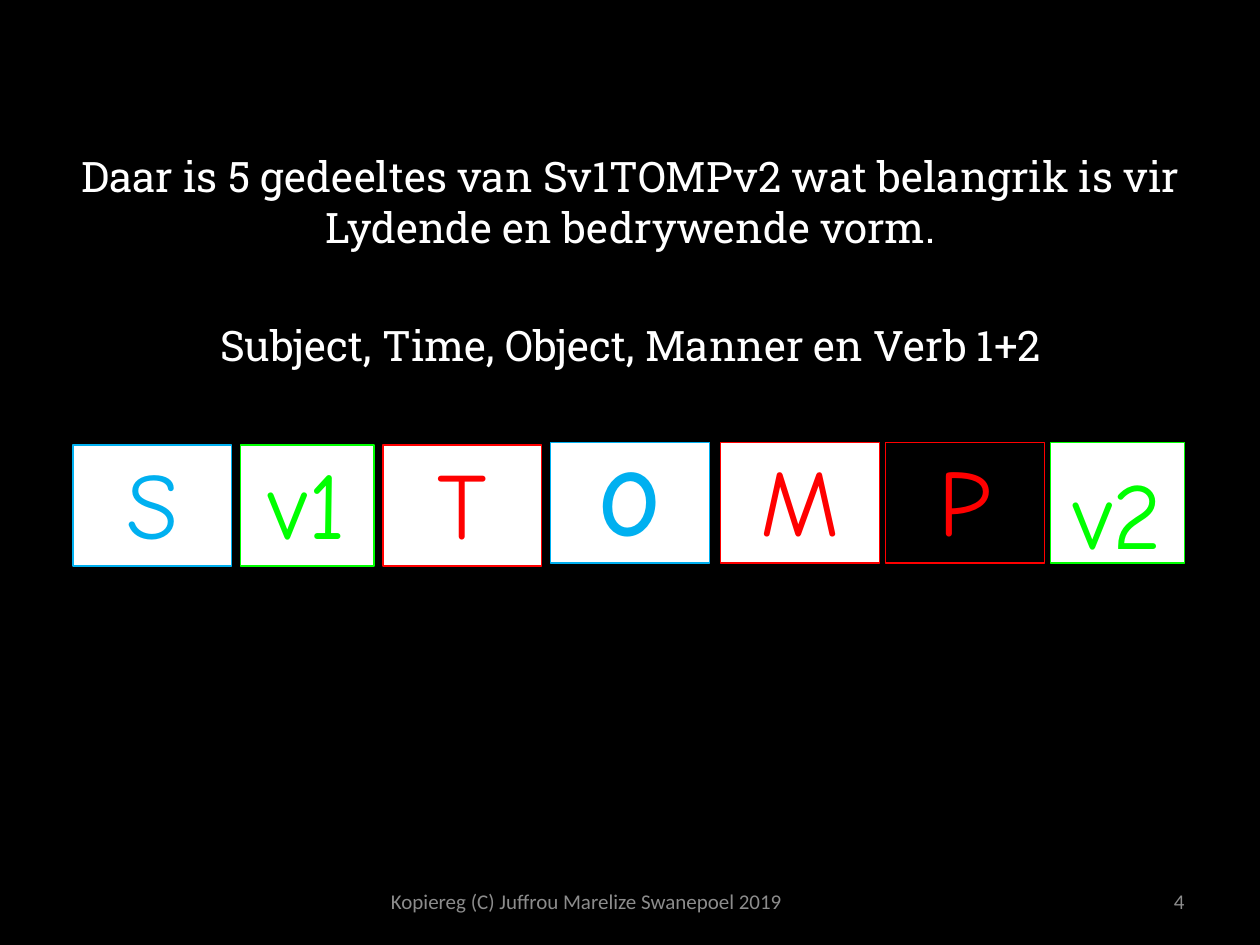
from pptx import Presentation
from pptx.dml.color import RGBColor
from pptx.enum.shapes import MSO_SHAPE
from pptx.enum.text import MSO_ANCHOR, MSO_AUTO_SIZE, PP_ALIGN
from pptx.oxml.xmlchemy import OxmlElement
from pptx.util import Inches, Pt

WIDTH, HEIGHT = 10, 7.5
BLUE, GREEN, RED = "00B0F0", "00FF00", "FF0000"
WHITE, BLACK, GREY = "FFFFFF", "000000", "8C8C8C"


def color(value):
    return RGBColor.from_string(value)


def apply(target, values):
    for name, value in values.items():
        setattr(target, name, value)


class SlideBuilder:
    """Holds the style and the current slide; places are shares of its size."""

    body_font = {"name": "Roboto Slab", "size": Pt(24)}
    card_font = {"name": "Comic Neue", "size": Pt(54)}
    footer_font = {"name": "Calibri", "size": Pt(12)}

    def __init__(self, deck, layout, background):
        self.deck = deck
        self.slide = deck.slides.add_slide(layout)
        self.slide.background.fill.solid()
        self.slide.background.fill.fore_color.rgb = color(background)

    def area(self, left, top, width, height):
        across, down = self.deck.slide_width, self.deck.slide_height
        return (round(left * across), round(top * down),
                round(width * across), round(height * down))

    def add_text(self, para, text, font, ink, **settings):
        apply(para, settings)
        span = para.add_run()
        span.text = text
        apply(span.font, font)
        span.font.color.rgb = color(ink)

    def body(self, area, lines, gap):
        title, box = self.slide.placeholders
        title.element.getparent().remove(title.element)
        apply(box, dict(zip(("left", "top", "width", "height"), self.area(*area))))
        apply(box.text_frame, {"word_wrap": True, "auto_size": MSO_AUTO_SIZE.NONE})
        for index, line in enumerate(lines):
            para = box.text_frame.add_paragraph() if index else box.text_frame.paragraphs[0]
            self.add_text(para, line, self.body_font, WHITE, alignment=PP_ALIGN.CENTER,
                          space_before=Pt(gap if index else 0))
            # No bullet and no hanging indent
            properties = para._p.get_or_add_pPr()
            properties.set("marL", "0")
            properties.set("indent", "0")
            properties.append(OxmlElement("a:buNone"))

    def card(self, area, text, ink, fill=WHITE, bold=False, spacing=0.9):
        box = self.slide.shapes.add_shape(MSO_SHAPE.RECTANGLE, *self.area(*area))
        box.shadow.inherit = False
        box.fill.solid()
        box.fill.fore_color.rgb = color(fill)
        box.line.color.rgb = color(ink)
        box.line.width = Pt(0.75)
        margins = ("margin_left", "margin_top", "margin_right", "margin_bottom")
        apply(box.text_frame, dict.fromkeys(margins, Inches(0.1)))
        apply(box.text_frame, {"vertical_anchor": MSO_ANCHOR.TOP, "word_wrap": True})
        self.add_text(box.text_frame.paragraphs[0], text, {**self.card_font, "bold": bold},
                      ink, alignment=PP_ALIGN.CENTER, line_spacing=spacing)

    def footer(self, area, text, alignment):
        box = self.slide.shapes.add_textbox(*self.area(*area))
        apply(box.text_frame, {"word_wrap": True, "vertical_anchor": MSO_ANCHOR.MIDDLE})
        self.add_text(box.text_frame.paragraphs[0], text, self.footer_font, GREY,
                      alignment=alignment)


def main():
    deck = Presentation()
    apply(deck, {"slide_width": Inches(WIDTH), "slide_height": Inches(HEIGHT)})
    page = SlideBuilder(deck, deck.slide_layouts[1], BLACK)

    # Explanation
    page.body((0.02, 0.153, 0.961, 0.785), [
        "Daar is 5 gedeeltes van Sv1TOMPv2 wat belangrik is vir Lydende en bedrywende vorm.",
        "Subject, Time, Object, Manner en Verb 1+2",
    ], gap=38.8)

    # Word-order cards: the verbs are narrower, the first three sit lower
    wide, narrow, low, high = 0.126, 0.106, 0.471, 0.468
    cards = [
        (0.058, low, wide, "S", BLUE, {}),
        (0.191, low, narrow, "v1", GREEN, {}),
        (0.304, low, wide, "T", RED, {}),
        (0.437, high, wide, "O", BLUE, {"bold": True}),
        (0.572, high, wide, "M", RED, {}),
        (0.703, high, wide, "P", RED, {"fill": BLACK}),
        (0.834, high, narrow, "v2", GREEN, {"spacing": 1.0}),
    ]
    for left, top, width, text, ink, options in cards:
        page.card((left, top, width, 0.128), text, ink, **options)

    # Footer and page number
    page.footer((0.272, 0.927, 0.387, 0.053),
                "Kopiereg (C) Juffrou Marelize Swanepoel 2019", PP_ALIGN.CENTER)
    page.footer((0.717, 0.927, 0.233, 0.053), "4", PP_ALIGN.RIGHT)

    deck.save("out.pptx")


if __name__ == "__main__":
    main()
